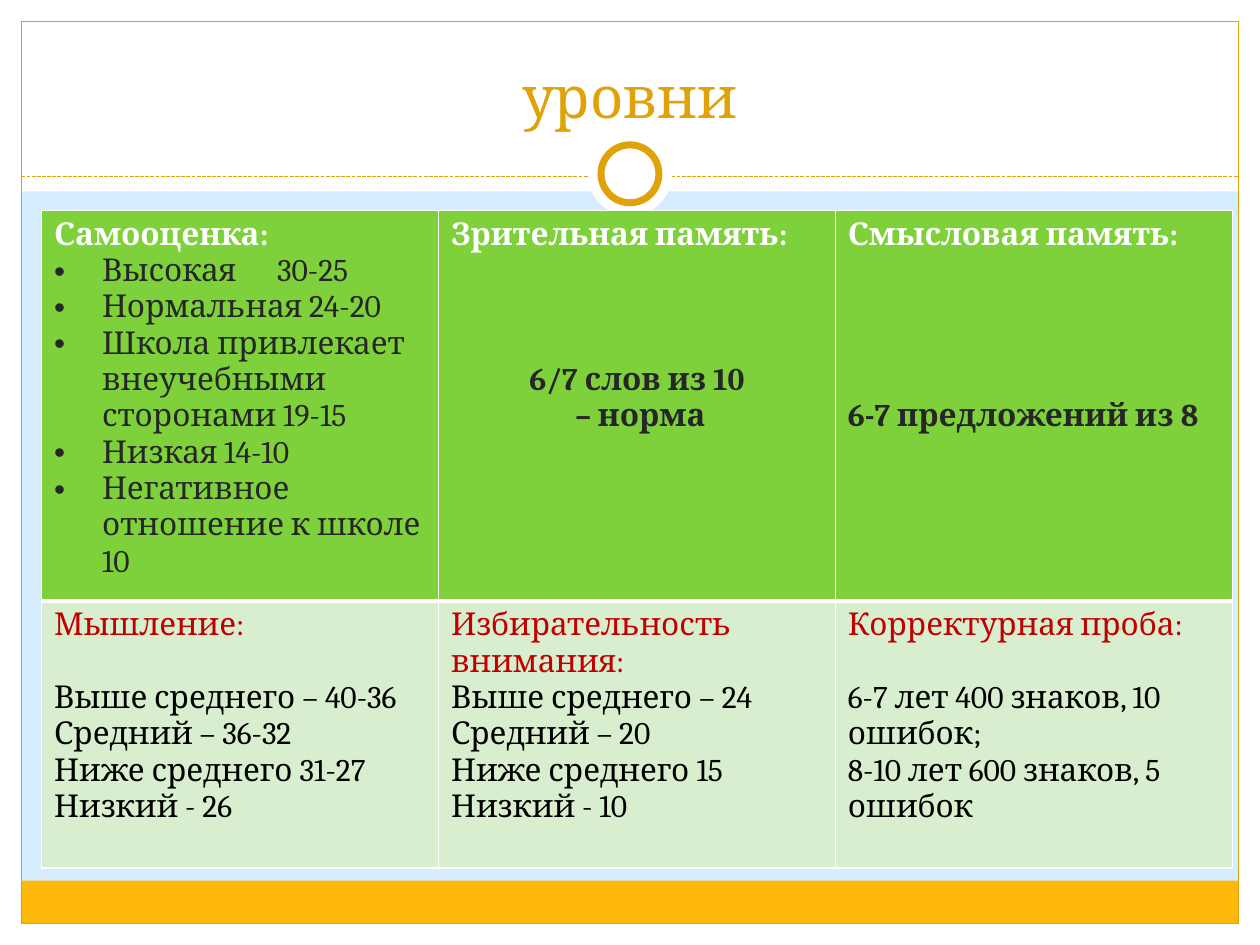
from pptx import Presentation
from pptx.dml.color import RGBColor as Rgb
from pptx.enum.dml import MSO_LINE as Dash
from pptx.enum.shapes import MSO_CONNECTOR as Conn, MSO_SHAPE as Kind
from pptx.enum.text import MSO_ANCHOR as Anchor, PP_ALIGN as Align
from pptx.oxml.ns import qn
from pptx.util import Inches as In, Pt
from lxml.etree import SubElement as Sub

COLORS = {"sky": "D6ECFF", "white": "FFFFFF", "amber": "FEB80A", "gold": "E0A209",
          "green": "7FD13B", "pale": "D8EECE", "dark": "262626", "red": "C00000",
          "black": "000000"}
FONT = "Cambria"

# Content: each cell is a heading, blank lines after it, then its lines
TITLE = "уровни"
TOP = [
    ("Самооценка:", 0, ["Высокая\t30-25", "Нормальная 24-20",
                        "Школа привлекает внеучебными сторонами 19-15",
                        "Низкая 14-10", "Негативное отношение к школе 10"]),
    ("Зрительная память:", 3, ["6/7 слов из 10", " – норма"]),
    ("Смысловая память:", 4, ["6-7 предложений из 8"]),
]
LOW = [
    ("Мышление:", 1, ["Выше среднего – 40-36", "Средний – 36-32",
                      "Ниже среднего 31-27", "Низкий - 26"]),
    ("Избирательность внимания:", 0, ["Выше среднего – 24", "Средний – 20",
                                      "Ниже среднего 15", "Низкий - 10"]),
    ("Корректурная проба:", 1, ["6-7 лет 400 знаков, 10 ошибок;",
                                "8-10 лет 600 знаков, 5 ошибок"]),
]
PLAIN = {"bold": False}
BOLD = {"bold": True}
# Per column of the top row: list style, font and alignment of the lines
LOOKS = [(True, PLAIN, Align.LEFT), (False, BOLD, Align.CENTER), (False, BOLD, Align.LEFT)]
ROWS = [
    {"cells": TOP, "fill": "green", "head": "white", "body": "dark", "bold": BOLD,
     "looks": LOOKS, "high": 3.02, "edge": 3},
    {"cells": LOW, "fill": "pale", "head": "red", "body": "black", "bold": PLAIN,
     "looks": [(False, PLAIN, Align.LEFT)] * 3, "high": 2.12, "edge": 1},
]

# Measures in inches, text in points
W, H, EDGE = 10, 7.5, 0.17
HEAD, FOOT, RULE = 1.52, 0.34, 1.4
LEFT, UP, COL = 0.33, 1.67, 3.15
SIZE, PITCH = 18, 20.75
HANG, TAB = 0.38, 1.77


def color(name):
    return Rgb.from_string(COLORS[name])


def draw(kind, x, y, w, h, fill=None, line=None, width=0.75):
    shape = slide.shapes.add_shape(kind, In(x), In(y), In(w), In(h))
    shape.shadow.inherit = False
    if fill:
        shape.fill.solid()
        shape.fill.fore_color.rgb = color(fill)
    else:
        shape.fill.background()
    if line:
        shape.line.color.rgb = color(line)
        shape.line.width = Pt(width)
    else:
        shape.line.fill.background()


def ring(size, **look):
    draw(Kind.OVAL, (W - size) / 2, RULE - 0.02 - size / 2, size, size, "white", **look)


def write(para, text, tint, size=SIZE, form=PLAIN):
    run = para.add_run()
    run.text = text
    for key, value in {"name": FONT, "size": Pt(size), **form}.items():
        setattr(run.font, key, value)
    run.font.color.rgb = color(tint)


def bullet(para):
    props = para._p.get_or_add_pPr()
    props.set("marL", str(In(HANG)))
    props.set("indent", str(-In(HANG)))
    Sub(props, qn("a:buFont"), typeface="Arial")
    Sub(props, qn("a:buChar"), char="•")
    Sub(Sub(props, qn("a:tabLst")), qn("a:tab"), pos=str(In(TAB)), algn="l")


def border(cell, low):
    props = cell._tc.get_or_add_tcPr()
    for spot, (side, width) in enumerate(zip("LRTB", (1, 1, 1, low))):
        line = props.makeelement(qn("a:ln" + side), {"w": str(Pt(width))})
        Sub(Sub(line, qn("a:solidFill")), qn("a:srgbClr"), val=COLORS["white"])
        props.insert(spot, line)


def fill_cell(cell, data, row, look):
    head, gap, lines = data
    listed, form, align = look
    cell.fill.solid()
    cell.fill.fore_color.rgb = color(row["fill"])
    border(cell, row["edge"])
    frame = cell.text_frame
    write(frame.paragraphs[0], head, row["head"], form=row["bold"])
    for i, text in enumerate(lines):
        para = frame.add_paragraph()
        para.alignment = align
        if i == 0 and gap:
            para.space_before = Pt(gap * PITCH)
        if listed:
            bullet(para)
        write(para, text, row["body"], form=form)


deck = Presentation()
deck.slide_width, deck.slide_height = In(W), In(H)
slide = deck.slides.add_slide(deck.slide_layouts[6])
slide.background.fill.solid()
slide.background.fill.fore_color.rgb = color("sky")

# White margins, footer band and frame
for box in [(0, H - EDGE, W, EDGE), (0, 0, W, HEAD), (0, 0, EDGE, H), (W - EDGE, 0, EDGE, H)]:
    draw(Kind.RECTANGLE, *box, "white")
wide = W - 2 * EDGE
draw(Kind.RECTANGLE, EDGE, H - EDGE - FOOT, wide, FOOT, "amber")
draw(Kind.RECTANGLE, EDGE, EDGE, wide, H - 2 * EDGE, line="gold")

# Dashed rule with the ring on it
rule = slide.shapes.add_connector(Conn.STRAIGHT, In(EDGE), In(RULE), In(W - EDGE), In(RULE))
rule.line.color.rgb = color("gold")
rule.line.width = Pt(0.75)
rule.line.dash_style = Dash.SQUARE_DOT
Sub(rule._element.spPr, qn("a:effectLst"))
ring(0.67)
ring(0.46, line="gold", width=4)

# Title
title = slide.shapes.add_textbox(In(LEFT), In(0.25), In(W - 2 * LEFT), In(0.83)).text_frame
title.word_wrap = True
title.vertical_anchor = Anchor.BOTTOM
title.paragraphs[0].alignment = Align.CENTER
write(title.paragraphs[0], TITLE, "gold", 33)

# Table of levels
high = sum(row["high"] for row in ROWS)
table = slide.shapes.add_table(len(ROWS), len(TOP), In(LEFT), In(UP),
                               In(COL * len(TOP)), In(high)).table
table.first_row = table.horz_banding = False
for col in table.columns:
    col.width = In(COL)
for r, row in enumerate(ROWS):
    table.rows[r].height = In(row["high"])
    for c, (data, look) in enumerate(zip(row["cells"], row["looks"])):
        fill_cell(table.cell(r, c), data, row, look)

deck.save("out.pptx")
